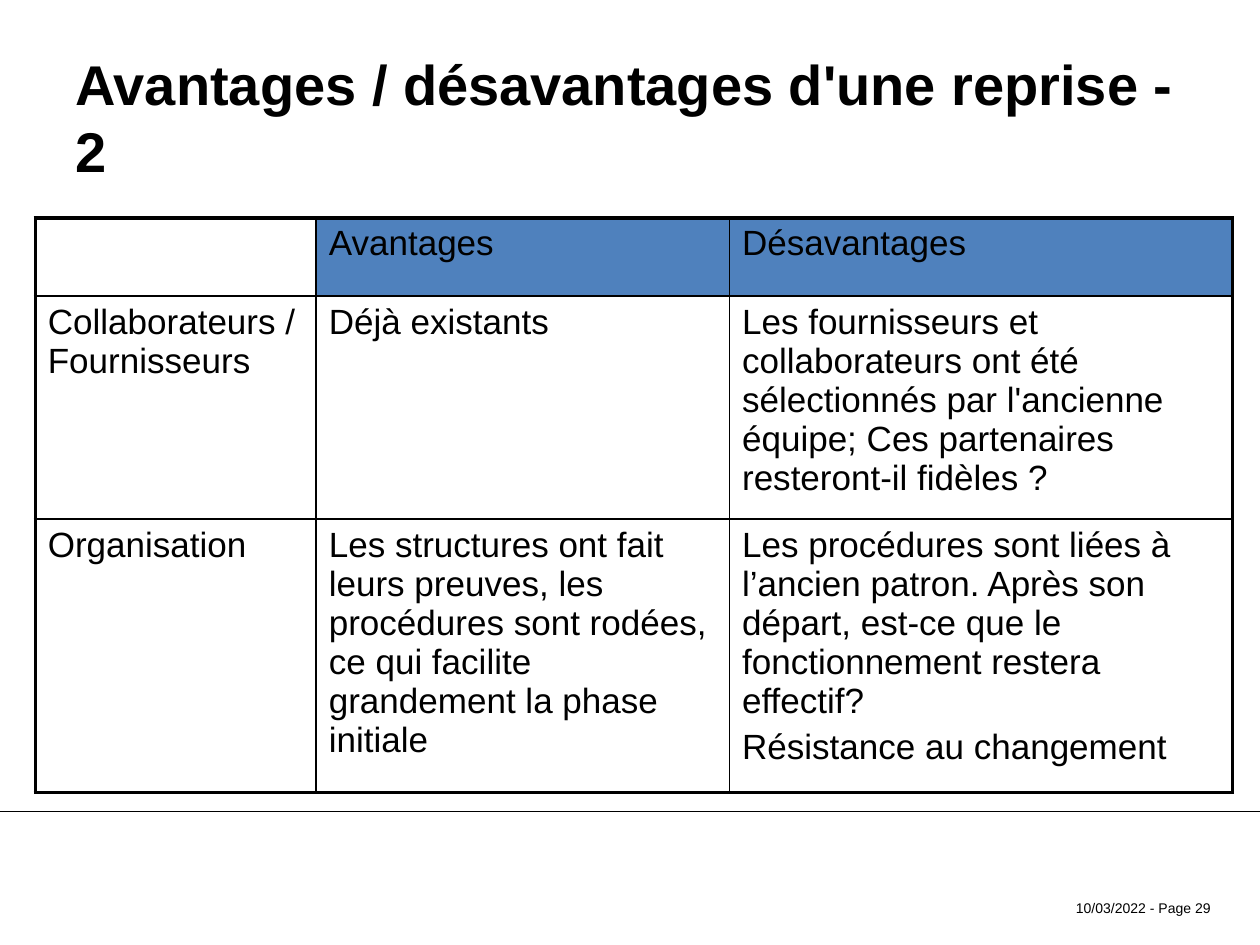
from dataclasses import dataclass

from lxml import etree
from pptx import Presentation
from pptx import util as u
from pptx.dml.color import RGBColor
from pptx.enum import shapes, text
from pptx.oxml.ns import qn

COLORS = {"ink": "000000", "header": "4F81BD"}
FONT = "Arial"
COLUMN_WIDTHS = (2.23, 3.28, 3.99)
ROW_HEIGHTS = (0.62, 1.77, 2.17)
OUTER_LINE, INNER_LINE = 2.25, 1
ROWS = (
    ((), ("Avantages",), ("Désavantages",)),
    (
        ("Collaborateurs / Fournisseurs",),
        ("Déjà existants",),
        ("Les fournisseurs et collaborateurs ont été sélectionnés par "
         "l'ancienne équipe; Ces partenaires resteront-il fidèles ?",),
    ),
    (
        ("Organisation",),
        ("Les structures ont fait leurs preuves, les procédures sont rodées, "
         "ce qui facilite grandement la phase initiale",),
        ("Les procédures sont liées à l’ancien patron. Après son départ, "
         "est-ce que le fonctionnement restera effectif?",
         "Résistance au changement"),
    ),
)


@dataclass(frozen=True)
class Label:
    """A single-paragraph text box, with lengths in inches."""

    content: str
    left: float
    top: float
    width: float
    height: float
    size: float
    bold: bool = False
    right_inset: float = 0.1
    align: text.PP_ALIGN = text.PP_ALIGN.LEFT


LABELS = (
    Label("10/03/2022 - Page 29", 8.34, 7.09, 1.37, 0.23, 8, align=text.PP_ALIGN.RIGHT),
    Label("Avantages / désavantages d'une reprise - 2", 0.5, 0.3, 9.29, 1.25, 32,
          bold=True, right_inset=0.2),
)


def color(name: str) -> RGBColor:
    """Return the named palette color."""
    return RGBColor.from_string(COLORS[name])


def add_run(paragraph, content: str, size: float, bold: bool = False) -> None:
    """Append one styled run to a paragraph."""
    run = paragraph.add_run()
    run.text = content
    run.font.name = FONT
    run.font.size = u.Pt(size)
    run.font.bold = bold
    run.font.color.rgb = color("ink")


def add_label(slide, label: Label) -> None:
    """Draw a vertically centred text box."""
    box = slide.shapes.add_textbox(
        u.Inches(label.left), u.Inches(label.top),
        u.Inches(label.width), u.Inches(label.height),
    )
    frame = box.text_frame
    frame.word_wrap = True
    frame.vertical_anchor = text.MSO_ANCHOR.MIDDLE
    frame.margin_right = u.Inches(label.right_inset)
    paragraph = frame.paragraphs[0]
    paragraph.alignment = label.align
    add_run(paragraph, label.content, label.size, label.bold)


def add_rule(slide, top: float) -> None:
    """Draw a thin line across the full slide width."""
    line = slide.shapes.add_connector(
        shapes.MSO_CONNECTOR.STRAIGHT,
        u.Inches(0), u.Inches(top), u.Inches(10), u.Inches(top),
    )
    line.line.color.rgb = color("ink")
    line.line.width = u.Pt(0.75)
    etree.SubElement(line._element.spPr, qn("a:effectLst"))


def set_borders(cell, outer_sides: dict[str, bool]) -> None:
    """Give a cell thick borders on the outer sides and thin ones elsewhere."""
    properties = cell._tc.get_or_add_tcPr()
    for side, is_outer in outer_sides.items():
        width = u.Pt(OUTER_LINE if is_outer else INNER_LINE)
        border = etree.SubElement(properties, qn(f"a:ln{side}"), w=str(int(width)))
        fill = etree.SubElement(border, qn("a:solidFill"))
        etree.SubElement(fill, qn("a:srgbClr"), val=COLORS["ink"])


def fill_cell(cell, contents: tuple[str, ...], is_header: bool) -> None:
    """Set the fill and paragraphs of a cell."""
    if is_header:
        cell.fill.solid()
        cell.fill.fore_color.rgb = color("header")
    else:
        cell.fill.background()
    frame = cell.text_frame
    for index, content in enumerate(contents):
        paragraph = frame.add_paragraph() if index else frame.paragraphs[0]
        if index:
            paragraph.space_before = u.Pt(4)
        add_run(paragraph, content, 20)


def add_comparison(slide) -> None:
    """Draw the table of advantages and disadvantages."""
    table = slide.shapes.add_table(
        len(ROW_HEIGHTS), len(COLUMN_WIDTHS), u.Inches(0.28), u.Inches(1.73),
        u.Inches(sum(COLUMN_WIDTHS)), u.Inches(sum(ROW_HEIGHTS)),
    ).table
    table.first_row = table.horz_banding = False
    for column, width in zip(table.columns, COLUMN_WIDTHS):
        column.width = u.Inches(width)
    for row, height in zip(table.rows, ROW_HEIGHTS):
        row.height = u.Inches(height)
    last_row, last_column = len(ROW_HEIGHTS) - 1, len(COLUMN_WIDTHS) - 1
    for i, row in enumerate(ROWS):
        for j, contents in enumerate(row):
            cell = table.cell(i, j)
            set_borders(cell, {"L": j == 0, "R": j == last_column,
                               "T": i == 0, "B": i == last_row})
            fill_cell(cell, contents, is_header=i == 0 and j > 0)


def main() -> None:
    """Build and save the presentation."""
    presentation = Presentation()
    presentation.slide_width = u.Inches(10)
    presentation.slide_height = u.Inches(7.5)
    slide = presentation.slides.add_slide(presentation.slide_layouts[6])
    add_rule(slide, 6.44)
    for label in LABELS:
        add_label(slide, label)
    add_comparison(slide)
    presentation.save("out.pptx")


if __name__ == "__main__":
    main()
